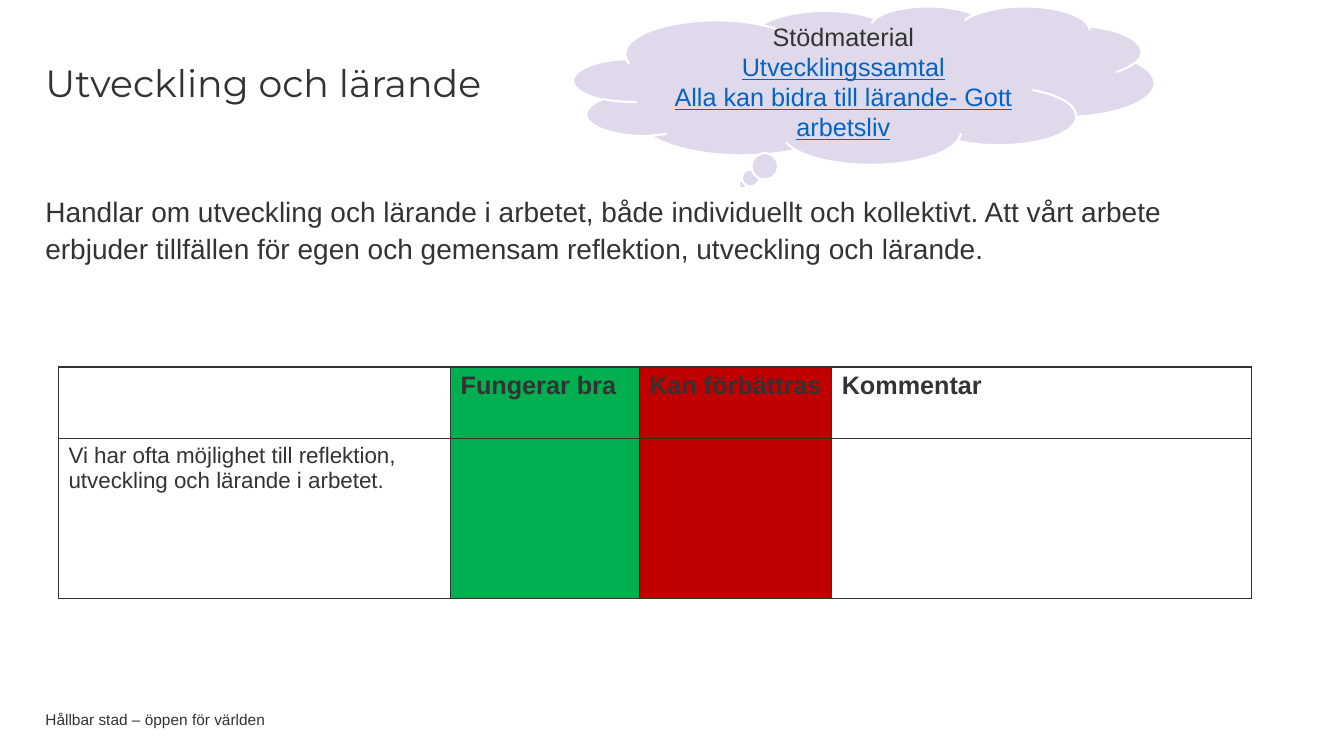
import dataclasses
import typing

import lxml.etree
import pptx
import pptx.dml.color
import pptx.enum.shapes
import pptx.enum.text
import pptx.oxml.ns
import pptx.util

EMU_PER_PX = 9144
COLOURS = {
    "text": "333333",
    "link": "0563C1",
    "good": "00B050",
    "improve": "C00000",
    "cloud": "E0D9EC",
    "outline": "FFFFFF",
}
LEFT = pptx.enum.text.PP_ALIGN.LEFT
CENTER = pptx.enum.text.PP_ALIGN.CENTER
TOP = pptx.enum.text.MSO_ANCHOR.TOP
MIDDLE = pptx.enum.text.MSO_ANCHOR.MIDDLE


@dataclasses.dataclass(frozen=True)
class Line:
    text: str
    size: int
    colour: str = "text"
    font: str = "Arial"
    bold: bool = False
    underline: bool = False
    align: typing.Any = LEFT
    spacing: float = 1.0


@dataclasses.dataclass(frozen=True)
class Block:
    left: int
    top: int
    width: int
    height: int
    line: Line
    anchor: typing.Any = TOP
    inset: int = 0


@dataclasses.dataclass(frozen=True)
class Column:
    width: int
    heading: str
    statement: str = ""
    fill: typing.Optional[str] = None


TITLE = Block(45, 44, 1003, 81, Line("Utveckling och lärande", 27, font="Montserrat", spacing=0.9), MIDDLE, 5)
BLOCKS = [
    Block(45, 190, 1163, 457, Line(
        "Handlar om utveckling och lärande i arbetet, både individuellt och kollektivt. "
        "Att vårt arbete erbjuder tillfällen för egen och gemensam reflektion, "
        "utveckling och lärande.", 20, spacing=1.1)),
    Block(45, 706, 945, 16, Line("Hållbar stad – öppen för världen", 11), MIDDLE),
]
COLUMNS = [
    Column(389, "", "Vi har ofta möjlighet till reflektion, utveckling och lärande i arbetet."),
    Column(187, "Fungerar bra", fill="good"),
    Column(191, "Kan förbättras", fill="improve"),
    Column(416, "Kommentar"),
]
ROW_HEIGHTS = [71, 159]
SUPPORT_LINES = [
    Line("Stödmaterial", 18, align=CENTER),
    Line("Utvecklingssamtal", 18, "link", underline=True, align=CENTER),
    Line("Alla kan bidra till lärande- Gott arbetsliv", 18, "link", underline=True, align=CENTER),
]


def px(length: int) -> pptx.util.Emu:
    return pptx.util.Emu(length * EMU_PER_PX)


def rgb(name: str) -> pptx.dml.color.RGBColor:
    return pptx.dml.color.RGBColor.from_string(COLOURS[name])


def apply(target: typing.Any, values: typing.Dict[str, typing.Any]) -> None:
    for name, value in values.items():
        setattr(target, name, value)


def write(frame: typing.Any, lines: typing.List[Line]) -> None:
    for index, line in enumerate(lines):
        para = frame.add_paragraph() if index else frame.paragraphs[0]
        apply(para, {"alignment": line.align, "line_spacing": line.spacing})
        span = para.add_run()
        span.text = line.text
        apply(span.font, {
            "name": line.font,
            "size": pptx.util.Pt(line.size),
            "bold": line.bold,
            "underline": line.underline,
        })
        span.font.color.rgb = rgb(line.colour)


def fill_block(box: typing.Any, block: Block) -> None:
    apply(box, {side: px(getattr(block, side)) for side in ("left", "top", "width", "height")})
    apply(box.text_frame, {
        "word_wrap": True,
        "auto_size": pptx.enum.text.MSO_AUTO_SIZE.NONE,
        "vertical_anchor": block.anchor,
        "margin_left": 0,
        "margin_right": 0,
        "margin_top": px(block.inset),
        "margin_bottom": px(block.inset),
    })
    write(box.text_frame, [block.line])


def add_borders(cell: typing.Any) -> None:
    qn = pptx.oxml.ns.qn
    properties = cell._tc.get_or_add_tcPr()
    for side in ("lnL", "lnR", "lnT", "lnB"):
        border = lxml.etree.SubElement(properties, qn(f"a:{side}"), w=str(pptx.util.Pt(1)))
        solid = lxml.etree.SubElement(border, qn("a:solidFill"))
        lxml.etree.SubElement(solid, qn("a:srgbClr"), val=COLOURS["text"])


def add_assessment_table(page: typing.Any) -> None:
    table = page.shapes.add_table(
        len(ROW_HEIGHTS), len(COLUMNS), px(58), px(364),
        px(sum(column.width for column in COLUMNS)), px(sum(ROW_HEIGHTS)),
    ).table
    apply(table, {"first_row": False, "horz_banding": False})
    for row, height in zip(table.rows, ROW_HEIGHTS):
        row.height = px(height)
    for index, column in enumerate(COLUMNS):
        table.columns[index].width = px(column.width)
        lines = [Line(column.heading, 18, bold=True), Line(column.statement, 16)]
        for row_index, line in enumerate(lines):
            cell = table.cell(row_index, index)
            add_borders(cell)
            if column.fill:
                cell.fill.solid()
                cell.fill.fore_color.rgb = rgb(column.fill)
            else:
                cell.fill.background()
            if line.text:
                write(cell.text_frame, [line])


def add_support_cloud(page: typing.Any) -> None:
    cloud = page.shapes.add_shape(
        pptx.enum.shapes.MSO_SHAPE.CLOUD_CALLOUT, px(569), px(6), px(576), px(157))
    cloud.shadow.inherit = False
    cloud.fill.solid()
    cloud.fill.fore_color.rgb = rgb("cloud")
    cloud.line.color.rgb = rgb("outline")
    cloud.line.width = pptx.util.Pt(1.5)
    apply(cloud.text_frame, {"word_wrap": True, "vertical_anchor": MIDDLE})
    write(cloud.text_frame, SUPPORT_LINES)


def main() -> None:
    deck = pptx.Presentation()
    apply(deck, {"slide_width": px(1333), "slide_height": px(750)})
    page = deck.slides.add_slide(deck.slide_layouts[5])
    fill_block(page.shapes.title, TITLE)
    for block in BLOCKS:
        fill_block(page.shapes.add_textbox(0, 0, 0, 0), block)
    add_assessment_table(page)
    add_support_cloud(page)
    deck.save("out.pptx")


if __name__ == "__main__":
    main()
